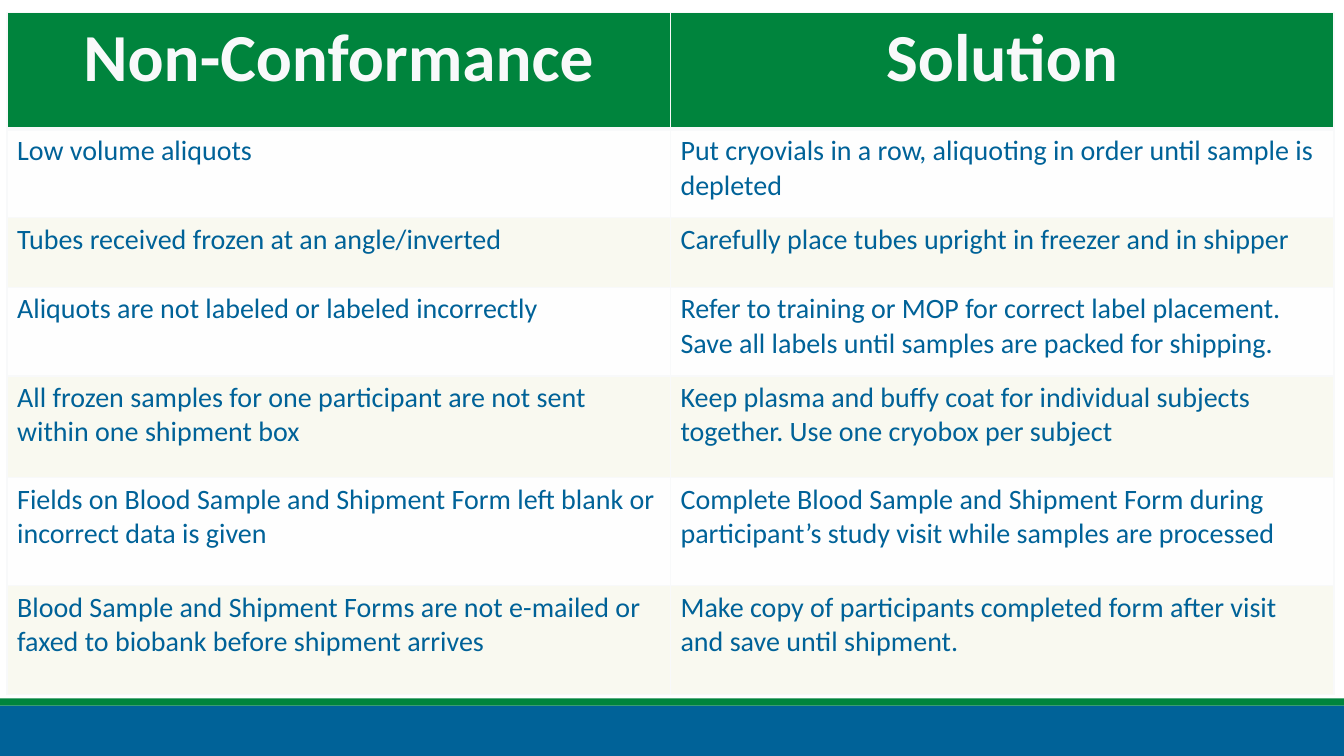
from lxml import etree
from pptx import Presentation, util as u
from pptx.dml.color import RGBColor
from pptx.enum import shapes, text
from pptx.oxml.ns import qn

THEME = {
    "font": "Calibri", "head": 48, "body": 20,
    "green": "00843D", "blue": "006298", "light": "F8F9FA",
    "bands": ("F9F9F0", "FEFEFE"),
}
ROWS = [
    (1.16, "Non-Conformance", "Solution"),
    (0.88, "Low volume aliquots",
     "Put cryovials in a row, aliquoting in order until sample is depleted"),
    (0.69, "Tubes received frozen at an angle/inverted",
     "Carefully place tubes upright in freezer and in shipper"),
    (0.88, "Aliquots are not labeled or labeled incorrectly",
     "Refer to training or MOP for correct label placement. "
     "Save all labels until samples are packed for shipping."),
    (1.01, "All frozen samples for one participant are not sent within one shipment box",
     "Keep plasma and buffy coat for individual subjects together. "
     "Use one cryobox per subject"),
    (1.07, "Fields on Blood Sample and Shipment Form left blank or incorrect data is given",
     "Complete Blood Sample and Shipment Form during participant’s study visit "
     "while samples are processed"),
    (1.08, "Blood Sample and Shipment Forms are not e-mailed or faxed to biobank "
     "before shipment arrives",
     "Make copy of participants completed form after visit and save until shipment."),
]
JUST = (1, 2)  # rows whose first cell is justified


def paint(item, tint):
    item.fill.solid()
    item.fill.fore_color.rgb = RGBColor.from_string(tint)


def edge(cell, side, width):
    """Draw one border of a cell; call before filling the cell."""
    line = etree.SubElement(cell._tc.get_or_add_tcPr(), qn(f"a:ln{side}"),
                            w=str(u.Pt(width)))
    fill = etree.SubElement(line, qn("a:solidFill"))
    etree.SubElement(fill, qn("a:srgbClr"), val=THEME["light"])


deck = Presentation()
deck.slide_width, deck.slide_height = u.Inches(13.33), u.Inches(7.5)
wide = deck.slide_width
slide = deck.slides.add_slide(deck.slide_layouts[6])

# Footer bands
for top, high, tint in ((7, 0.5, "blue"), (6.93, 0.07, "green")):
    band = slide.shapes.add_shape(shapes.MSO_SHAPE.RECTANGLE, 0,
                                  u.Inches(top), wide, u.Inches(high))
    band.shadow.inherit = False
    band.line.fill.background()
    paint(band, THEME[tint])

# Table of problems and remedies
high = sum(row[0] for row in ROWS)
grid = slide.shapes.add_table(len(ROWS), 2, u.Inches(0.07), u.Inches(0.12),
                              u.Inches(13.15), u.Inches(high)).table
for col in grid.columns:
    col.width = u.Inches(6.58)

for r, (high, *words) in enumerate(ROWS):
    grid.rows[r].height = u.Inches(high)
    head = r == 0
    for c, word in enumerate(words):
        cell = grid.cell(r, c)
        for side in "LRTB":
            thick = (head and side == "B") or (r == 1 and side == "T")
            edge(cell, side, 3 if thick else 1)
        paint(cell, THEME["green"] if head else THEME["bands"][r % 2])
        cell.text_frame.text = word
        para = cell.text_frame.paragraphs[0]
        if head:
            para.alignment = text.PP_ALIGN.CENTER
        elif c == 0 and r in JUST:
            para.alignment = text.PP_ALIGN.JUSTIFY
        font = para.runs[0].font
        font.name, font.bold = THEME["font"], head
        font.size = u.Pt(THEME["head" if head else "body"])
        font.color.rgb = RGBColor.from_string(THEME["light" if head else "blue"])

deck.save("out.pptx")
